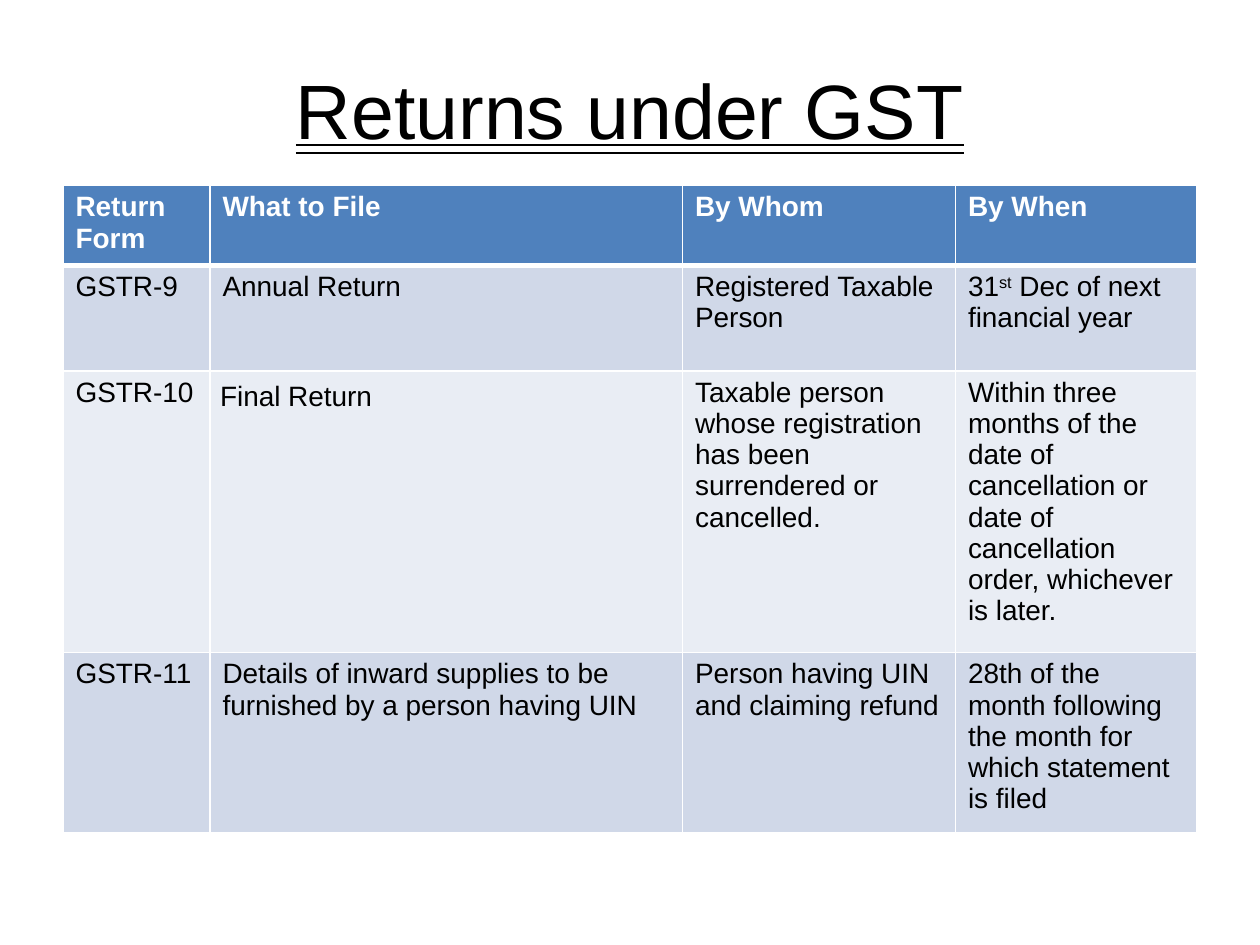
"""Build a slide with a table of returns under GST."""
import pptx
import pptx.dml.color
import pptx.enum.text
import pptx.oxml.ns
import pptx.util
from lxml import etree

Pt = pptx.util.Pt
TITLE = "Returns under GST"
ROWS = [
    ["Return Form", "What to File", "By Whom", "By When"],
    ["GSTR-9", "Annual Return", "Registered Taxable Person",
     ("31", "st", " Dec of next financial year")],
    ["GSTR-10", "Final Return",
     "Taxable person whose registration has been surrendered or cancelled.",
     "Within three months of the date of cancellation or date of cancellation "
     "order, whichever is later."],
    ["GSTR-11", "Details of inward supplies to be furnished by a person having UIN",
     "Person having UIN and claiming refund",
     "28th of the month following the month for which statement is filed"],
]
COLUMN_WIDTHS = [84, 270, 156, 138]
ROW_HEIGHTS = [42.5, 60.5, 149.5, 95.5]
HEADER_FILL, BAND_FILLS = "4F81BD", ["E9EDF4", "D0D8E8"]
WHITE, BLACK = "FFFFFF", "000000"
SUPERSCRIPT = "st"
INSET_CELL, INSET = (2, 1), 5.76


def color(value):
    return pptx.dml.color.RGBColor.from_string(value)


def add_run(paragraph, text, size, font_color, bold=False):
    run = paragraph.add_run()
    run.text = text
    run.font.name = "Arial"
    run.font.size = Pt(size)
    run.font.bold = bold
    run.font.color.rgb = color(font_color)
    return run


def set_borders(cell, bottom_width, top_width):
    properties = cell._tc.get_or_add_tcPr()
    widths = {"lnL": 1, "lnR": 1, "lnT": top_width, "lnB": bottom_width}
    for position, (tag, width) in enumerate(widths.items()):
        line = etree.Element(pptx.oxml.ns.qn(f"a:{tag}"), w=str(int(Pt(width))))
        fill = etree.SubElement(line, pptx.oxml.ns.qn("a:solidFill"))
        etree.SubElement(fill, pptx.oxml.ns.qn("a:srgbClr"), val=WHITE)
        properties.insert(position, line)


def add_title(slide):
    shape = slide.shapes.add_textbox(Pt(36), Pt(21.6), Pt(648), Pt(81))
    frame = shape.text_frame
    frame.word_wrap = True
    frame.vertical_anchor = pptx.enum.text.MSO_ANCHOR.MIDDLE
    paragraph = frame.paragraphs[0]
    paragraph.alignment = pptx.enum.text.PP_ALIGN.CENTER
    run = add_run(paragraph, TITLE, 44, BLACK)
    run.font.underline = pptx.enum.text.MSO_UNDERLINE.DOUBLE_LINE


def fill_cell(cell, content, row, column):
    header = row == 0
    cell.fill.solid()
    cell.fill.fore_color.rgb = color(HEADER_FILL if header else BAND_FILLS[row % 2])
    set_borders(cell, 3 if header else 1, 3 if row == 1 else 1)
    if (row, column) == INSET_CELL:
        cell.margin_left = cell.margin_right = Pt(INSET)
        cell.margin_top = cell.margin_bottom = Pt(INSET)
    paragraph = cell.text_frame.paragraphs[0]
    for text in [content] if isinstance(content, str) else content:
        run = add_run(paragraph, text, 16, WHITE if header else BLACK, header)
        if text == SUPERSCRIPT:
            run.font._element.set("baseline", "30000")


def add_returns_table(slide):
    table = slide.shapes.add_table(
        len(ROWS), len(COLUMN_WIDTHS), Pt(36), Pt(106),
        Pt(sum(COLUMN_WIDTHS)), Pt(sum(ROW_HEIGHTS))).table
    for column, width in zip(table.columns, COLUMN_WIDTHS):
        column.width = Pt(width)
    for row, height in zip(table.rows, ROW_HEIGHTS):
        row.height = Pt(height)
    for row, contents in enumerate(ROWS):
        for column, content in enumerate(contents):
            fill_cell(table.cell(row, column), content, row, column)


def main():
    presentation = pptx.Presentation()
    presentation.slide_width, presentation.slide_height = Pt(720), Pt(540)
    slide = presentation.slides.add_slide(presentation.slide_layouts[6])
    add_title(slide)
    add_returns_table(slide)
    presentation.save("out.pptx")


if __name__ == "__main__":
    main()
